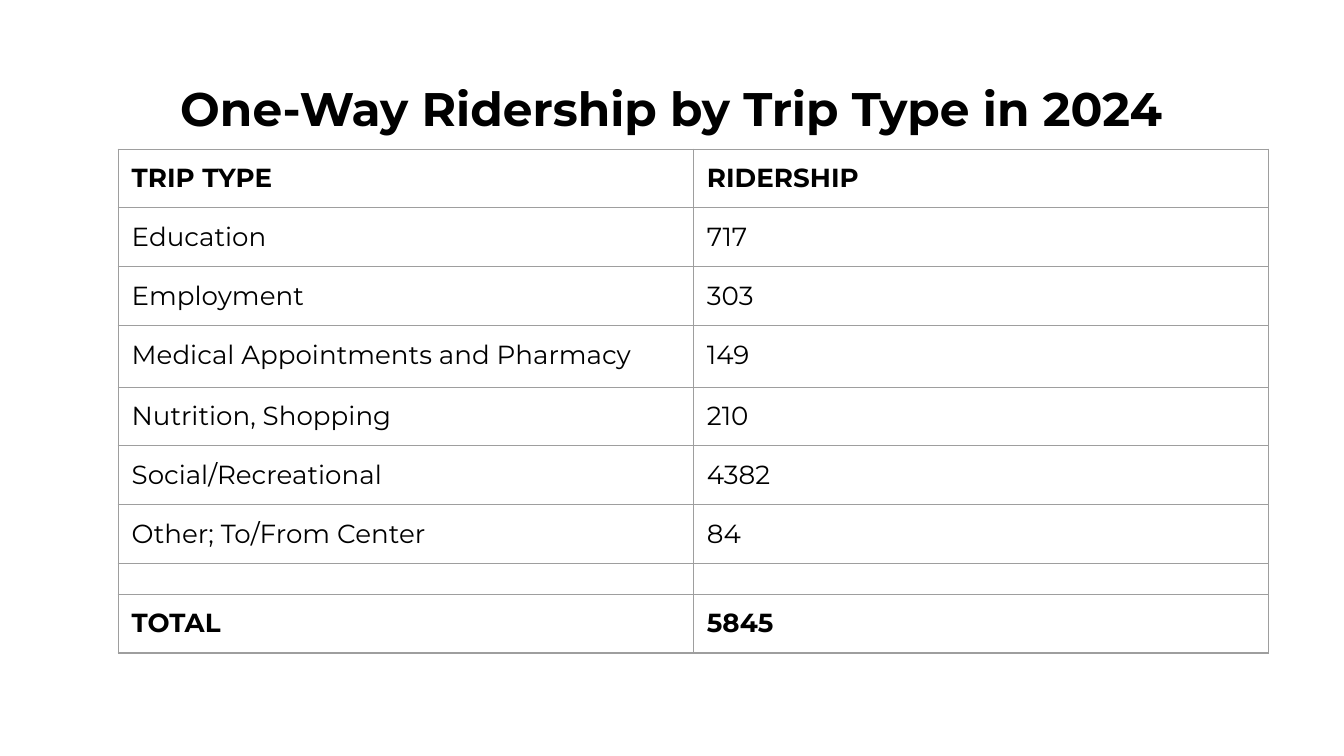
"""Build a slide with a table of one-way ridership by trip type."""
from typing import NamedTuple

from lxml import etree
from pptx import Presentation
from pptx import util as u
from pptx.dml.color import RGBColor
from pptx.enum import text
from pptx.oxml import ns

FONT = "Montserrat"
BLACK = "000000"
GRID = "9E9E9E"
INSET = 0.1
SLIDE_WIDTH = 10


class Trip(NamedTuple):
    kind: str
    ridership: str
    height: float = 0.38
    bold: bool = False


TRIPS = [
    Trip("TRIP TYPE", "RIDERSHIP", bold=True),
    Trip("Education", "717"),
    Trip("Employment", "303"),
    Trip("Medical Appointments and Pharmacy", "149", height=0.46),
    Trip("Nutrition, Shopping", "210"),
    Trip("Social/Recreational", "4382"),
    Trip("Other; To/From Center", "84"),
    Trip("", "", height=0.23),
    Trip("TOTAL", "5845", bold=True),
]


def color(value: str) -> RGBColor:
    return RGBColor.from_string(value)


def write(frame, words: str, *, size: float, bold: bool = False,
          fill: str = BLACK, align=text.PP_ALIGN.LEFT) -> None:
    paragraph = frame.paragraphs[0]
    paragraph.alignment = align
    run = paragraph.add_run()
    run.text = words
    run.font.name = FONT
    run.font.size = u.Pt(size)
    run.font.bold = bold
    run.font.color.rgb = color(fill)


def set_margins(holder, across: float, down: float) -> None:
    holder.margin_left = holder.margin_right = u.Inches(across)
    holder.margin_top = holder.margin_bottom = u.Inches(down)


def draw_borders(cell, value: str, width: float) -> None:
    properties = cell._tc.get_or_add_tcPr()
    for side in ("lnL", "lnR", "lnT", "lnB"):
        line = etree.SubElement(properties, ns.qn(f"a:{side}"), w=str(u.Pt(width)))
        solid = etree.SubElement(line, ns.qn("a:solidFill"))
        etree.SubElement(solid, ns.qn("a:srgbClr"), val=value)


def fill_cell(cell, words: str, bold: bool) -> None:
    set_margins(cell, INSET, INSET if words else 0)
    draw_borders(cell, GRID, 0.75)
    cell.fill.background()
    if words:
        write(cell.text_frame, words, size=14, bold=bold)
    else:
        paragraph = cell.text_frame.paragraphs[0]._p
        etree.SubElement(paragraph, ns.qn("a:endParaRPr"), sz="1200")


def draw_title(title, words: str) -> None:
    title.left, title.top = u.Inches(1.23), u.Inches(0.49)
    title.width, title.height = u.Inches(7.53), u.Inches(0.63)
    frame = title.text_frame
    set_margins(frame, INSET, INSET)
    frame.word_wrap = True
    frame.auto_size = text.MSO_AUTO_SIZE.NONE
    frame.vertical_anchor = text.MSO_ANCHOR.MIDDLE
    write(frame, words, size=25.2, bold=True, align=text.PP_ALIGN.CENTER)


def draw_trips(slide, trips: list[Trip]) -> None:
    height = sum(trip.height for trip in trips)
    table = slide.shapes.add_table(
        len(trips), 2, u.Inches(0.88), u.Inches(1.11),
        u.Inches(8.56), u.Inches(height)).table
    table.first_row = table.horz_banding = False
    for row, trip in zip(table.rows, trips):
        row.height = u.Inches(trip.height)
        for cell, words in zip(row.cells, (trip.kind, trip.ridership)):
            fill_cell(cell, words, trip.bold)


def main() -> None:
    deck = Presentation()
    deck.slide_width = u.Inches(SLIDE_WIDTH)
    deck.slide_height = u.Inches(SLIDE_WIDTH * 9 / 16)
    slide = deck.slides.add_slide(deck.slide_layouts[5])
    slide.background.fill.solid()
    slide.background.fill.fore_color.rgb = color("FFFFFF")
    draw_title(slide.shapes.title, "One-Way Ridership by Trip Type in 2024")
    draw_trips(slide, TRIPS)
    deck.save("out.pptx")


if __name__ == "__main__":
    main()
